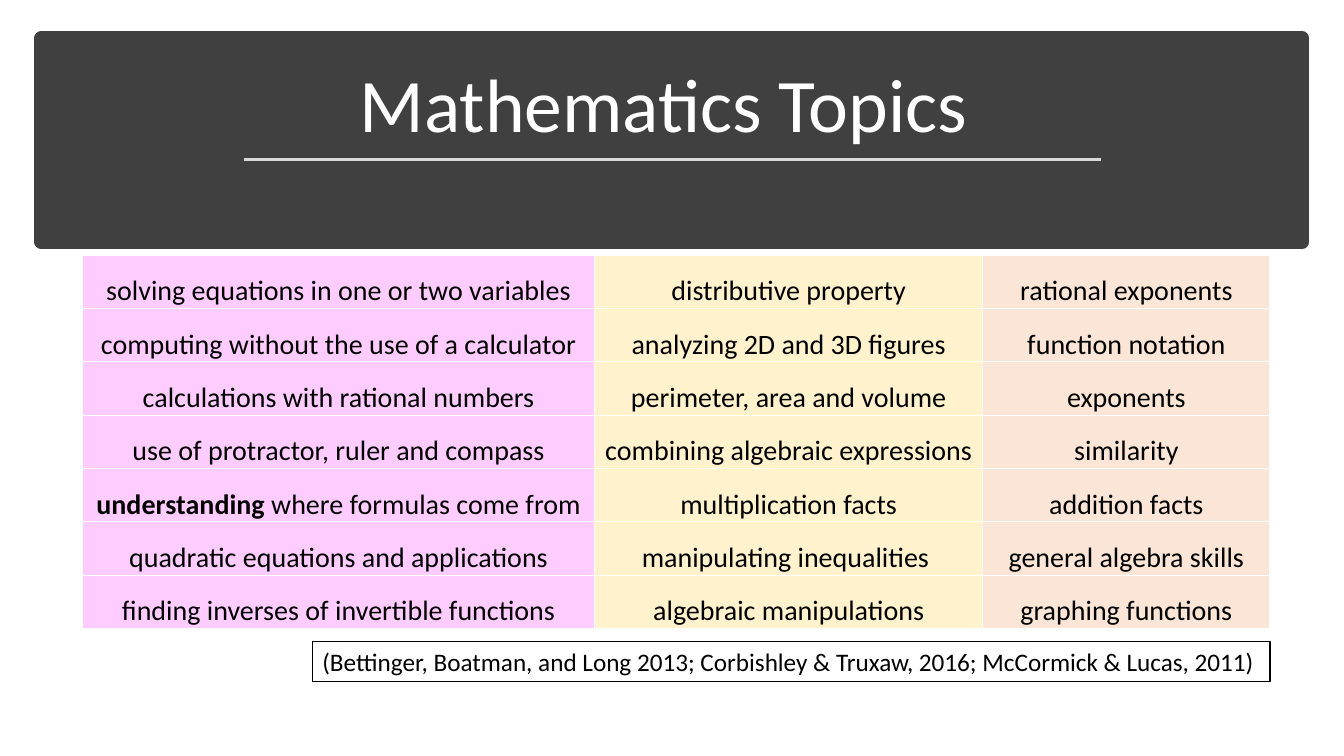
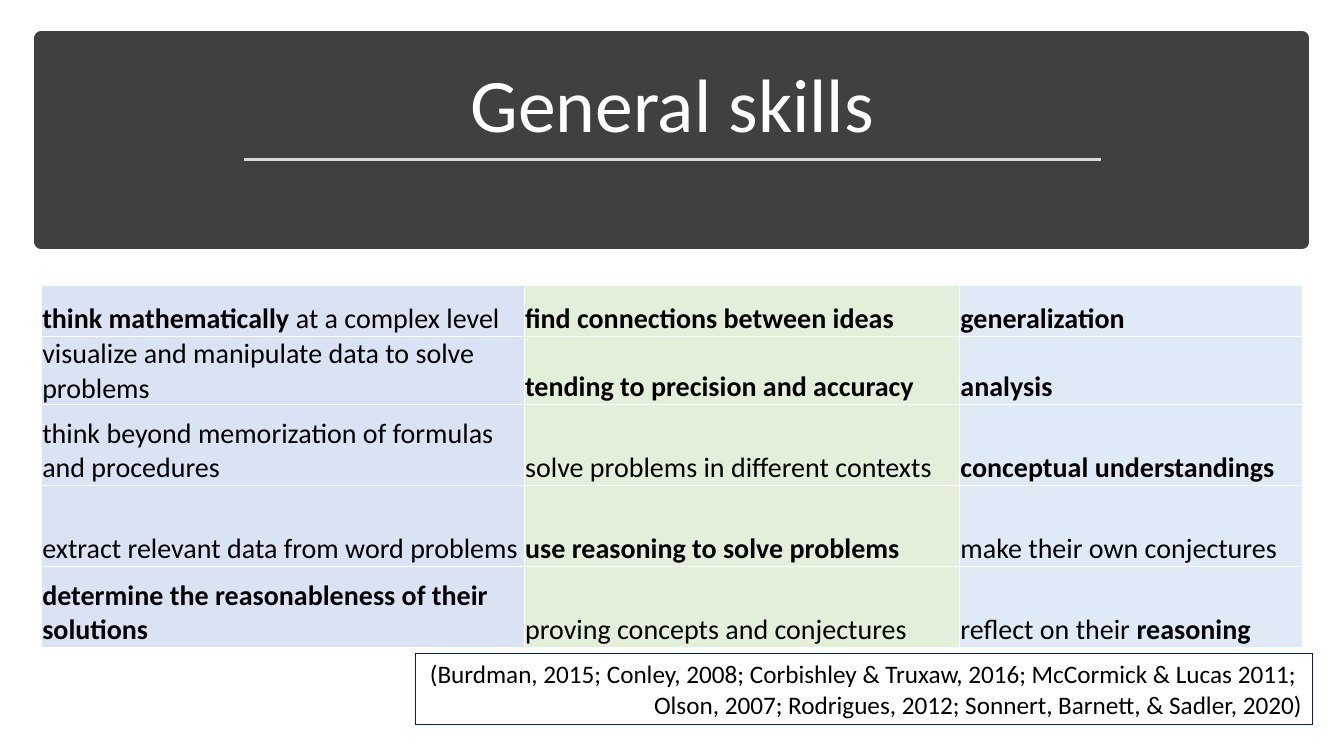
"""Build two slides of mathematics topics and general skills, each with a coloured table."""
from dataclasses import dataclass

from lxml import etree
from pptx import Presentation
from pptx.dml.color import RGBColor
from pptx.enum.shapes import MSO_CONNECTOR, MSO_SHAPE
from pptx.enum.text import MSO_ANCHOR, PP_ALIGN
from pptx.oxml.ns import qn
from pptx.util import Pt

LEFT, CENTER, RIGHT = PP_ALIGN.LEFT, PP_ALIGN.CENTER, PP_ALIGN.RIGHT
BOTTOM, MIDDLE = MSO_ANCHOR.BOTTOM, MSO_ANCHOR.MIDDLE
RECTANGLE, STRAIGHT = MSO_SHAPE.RECTANGLE, MSO_CONNECTOR.STRAIGHT

FONT = "Calibri"
BLACK, WHITE, BAND, RULE = "000000", "FFFFFF", "404040", "D9D9D9"
PINK, CREAM, PEACH = "FFCCFF", "FFF2CC", "FBE5D6"
BLUE, GREEN, SKY, NAVY = "DAE3F3", "E2F0D9", "DEEBF7", "002060"


@dataclass(frozen=True)
class Grid:
    left: float
    top: float
    widths: tuple[float, ...]
    heights: tuple[float, ...]
    fills: tuple[str, ...]
    align: PP_ALIGN
    rows: tuple[tuple[str, ...], ...]


@dataclass(frozen=True)
class Citation:
    left: float
    top: float
    width: float
    height: float
    line: str
    align: PP_ALIGN
    text: str


@dataclass(frozen=True)
class Page:
    title: str
    grid: Grid
    citation: Citation


PAGES = (
    Page(
        "Mathematics Topics ",
        Grid(59, 182.2, (365.8, 277.2, 205.2), (38.1,) * 7, (PINK, CREAM, PEACH), CENTER, (
            ("solving equations in one or two variables", "distributive property",
             "rational exponents"),
            ("computing without the use of a calculator", "analyzing 2D and 3D figures",
             "function notation"),
            ("calculations with rational numbers", "perimeter, area and volume", "exponents"),
            ("use of protractor, ruler and compass", "combining algebraic expressions",
             "similarity"),
            ("*understanding* where formulas come from", "multiplication facts",
             "addition facts"),
            ("quadratic equations and applications", "manipulating inequalities ",
             "general algebra skills"),
            ("finding inverses of invertible functions", "algebraic manipulations",
             "graphing functions"),
        )),
        Citation(223.2, 457.9, 684, 29, BLACK, LEFT,
                 "(Bettinger, Boatman, and Long 2013; Corbishley & Truxaw, 2016; "
                 "McCormick & Lucas, 2011)"),
    ),
    Page(
        "General skills",
        Grid(29.5, 203.8, (344.9, 311, 244.8), (36.4, 47.5, 57.8, 57.8, 57.8),
             (BLUE, GREEN, SKY), LEFT, (
            ("*think mathematically *at a complex level", "*find connections between ideas*",
             "*generalization*"),
            ("visualize and manipulate data to solve problems",
             "*tending to precision and accuracy*", "*analysis*"),
            ("think beyond memorization of formulas and procedures",
             "solve problems in different contexts", "*conceptual understandings*"),
            ("extract relevant data from word problems", "*use reasoning to solve problems*",
             "make their own conjectures"),
            ("*determine the reasonableness of their solutions*",
             "proving concepts and conjectures", "reflect on their *reasoning*"),
        )),
        Citation(296.6, 466.6, 640.8, 51, NAVY, RIGHT,
                 "(Burdman, 2015; Conley, 2008; Corbishley & Truxaw, 2016; "
                 "McCormick & Lucas 2011; \n"
                 "Olson, 2007; Rodrigues, 2012; Sonnert, Barnett, & Sadler, 2020)"),
    ),
)


def rgb(color: str) -> RGBColor:
    """Turn a hex string into a colour."""
    return RGBColor.from_string(color)


def style_run(r, size: float, color: str, bold: bool = False) -> None:
    """Set the font of one run."""
    r.font.name, r.font.size, r.font.bold = FONT, Pt(size), bold
    r.font.color.rgb = rgb(color)


def style_text(tf, size: float, color: str, align: PP_ALIGN) -> None:
    """Format all paragraphs and runs of a text frame."""
    tf.word_wrap = True
    for p in tf.paragraphs:
        p.alignment = align
        for r in p.runs:
            style_run(r, size, color)


def add_box(s, left: float, top: float, width: float, height: float,
            line: str, line_width: float, fill: str | None = None):
    """Add a flat rectangle."""
    sp = s.shapes.add_shape(RECTANGLE, Pt(left), Pt(top), Pt(width), Pt(height))
    sp.shadow.inherit = False
    if fill:
        sp.fill.solid()
        sp.fill.fore_color.rgb = rgb(fill)
    else:
        sp.fill.background()
    sp.line.color.rgb = rgb(line)
    sp.line.width = Pt(line_width)
    return sp


def add_header(s, title: str) -> None:
    """Add the dark band with its title and rule."""
    add_box(s, 29.5, 27.4, 900.7, 145.4, BAND, 10, BAND)
    tf = s.shapes.add_textbox(Pt(41.8), Pt(36.7), Pt(877), Pt(73.4)).text_frame
    tf.text = title
    tf.vertical_anchor = BOTTOM
    style_text(tf, 54, WHITE, CENTER)
    tf.paragraphs[0].line_spacing = 0.9
    rule = s.shapes.add_connector(STRAIGHT, Pt(174.2), Pt(113.8), Pt(786.2), Pt(113.8))
    rule.line.color.rgb = rgb(RULE)
    rule.line.width = Pt(1.75)
    etree.SubElement(rule._element.spPr, qn("a:effectLst"))


def add_borders(cell, color: str, width: float) -> None:
    """Draw a solid line on all four sides of a cell."""
    tc_pr = cell._tc.get_or_add_tcPr()
    for side in "LRTB":
        ln = etree.SubElement(tc_pr, qn(f"a:ln{side}"), w=str(Pt(width)))
        fill = etree.SubElement(ln, qn("a:solidFill"))
        etree.SubElement(fill, qn("a:srgbClr"), val=color)


def fill_cell(cell, text: str, fill: str, align: PP_ALIGN) -> None:
    """Write a cell, with the parts between asterisks in bold."""
    add_borders(cell, WHITE, 1)
    cell.fill.solid()
    cell.fill.fore_color.rgb = rgb(fill)
    cell.vertical_anchor = BOTTOM
    cell.margin_left = cell.margin_right = cell.margin_top = Pt(0.7)
    cell.margin_bottom = 0
    p = cell.text_frame.paragraphs[0]
    p.alignment = align
    for i, part in enumerate(text.split("*")):
        if part:
            r = p.add_run()
            r.text = part
            style_run(r, 20, BLACK, i % 2 == 1)


def add_grid(s, grid: Grid) -> None:
    """Add a table with one fill colour per column."""
    table = s.shapes.add_table(
        len(grid.heights), len(grid.widths), Pt(grid.left), Pt(grid.top),
        Pt(sum(grid.widths)), Pt(sum(grid.heights))).table
    table.first_row = table.horz_banding = False
    for column, width in zip(table.columns, grid.widths):
        column.width = Pt(width)
    for row, height, texts in zip(table.rows, grid.heights, grid.rows):
        row.height = Pt(height)
        for cell, text, fill in zip(row.cells, texts, grid.fills):
            fill_cell(cell, text, fill, grid.align)


def add_citation(s, c: Citation) -> None:
    """Add the outlined box of sources."""
    sp = add_box(s, c.left, c.top, c.width, c.height, c.line, 0.75)
    tf = sp.text_frame
    tf.text = c.text
    tf.vertical_anchor = MIDDLE
    style_text(tf, 18, BLACK, c.align)


def main() -> None:
    """Build and save the presentation."""
    prs = Presentation()
    prs.slide_width, prs.slide_height = Pt(960), Pt(540)
    for page in PAGES:
        s = prs.slides.add_slide(prs.slide_layouts[6])
        add_header(s, page.title)
        add_grid(s, page.grid)
        add_citation(s, page.citation)
    prs.save("out.pptx")


if __name__ == "__main__":
    main()
